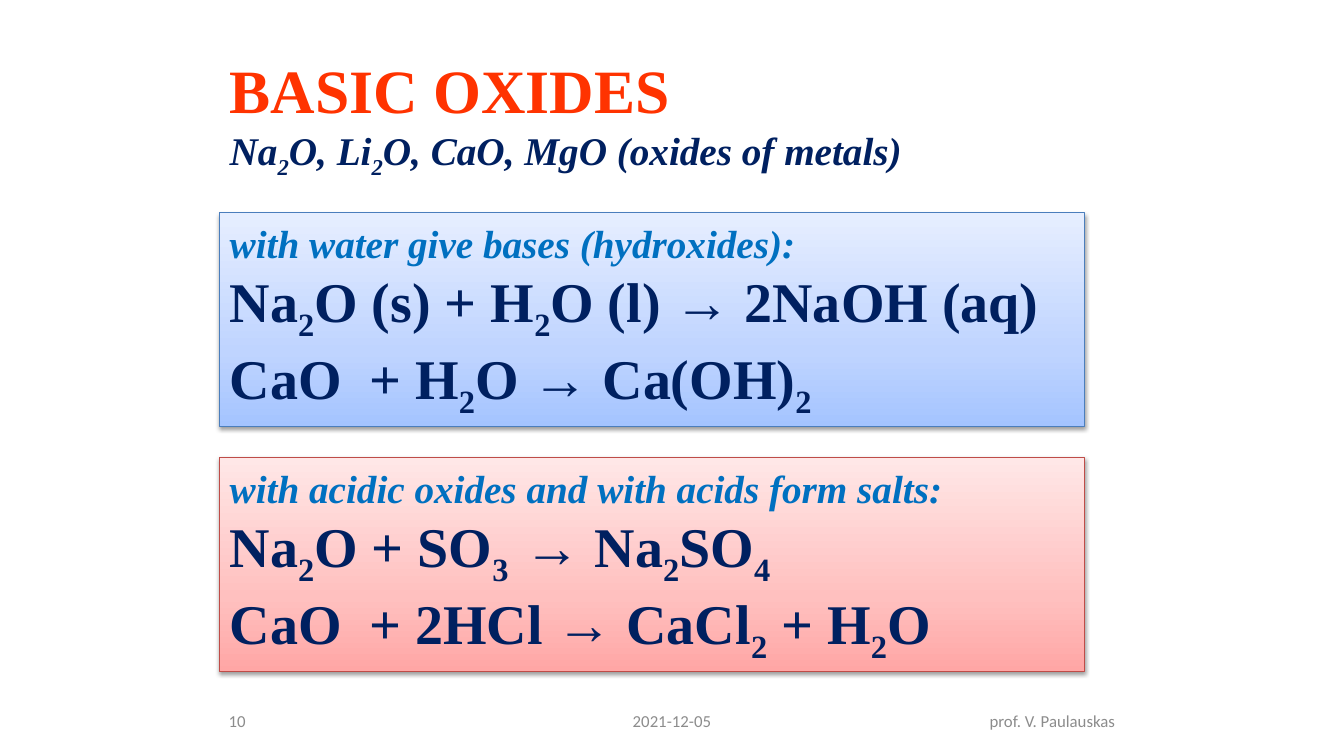
from lxml import etree
from pptx import Presentation
from pptx.dml.color import RGBColor
from pptx.enum.shapes import MSO_SHAPE
from pptx.enum.text import MSO_ANCHOR, PP_ALIGN
from pptx.oxml import parse_xml
from pptx.oxml.ns import nsdecls, qn
from pptx.util import Inches, Pt

RECTANGLE = MSO_SHAPE.RECTANGLE
MIDDLE = MSO_ANCHOR.MIDDLE
LEFT, CENTER, RIGHT = PP_ALIGN.LEFT, PP_ALIGN.CENTER, PP_ALIGN.RIGHT

ORANGE = RGBColor(0xFF, 0x33, 0x00)
NAVY = RGBColor(0x00, 0x20, 0x60)
BLUE = RGBColor(0x00, 0x70, 0xC0)
GRAY = RGBColor(0x8C, 0x8C, 0x8C)
BLUE_EDGE = RGBColor(0x4B, 0x7E, 0xBC)
RED_EDGE = RGBColor(0xBF, 0x4C, 0x48)
BLUE_STOPS = ((0, "A4C4FF"), (35, "BFD4FF"), (100, "E6EEFF"))
RED_STOPS = ((0, "FFA6A5"), (35, "FFC0BF"), (100, "FFE7E7"))


def write_formulas(sp, lines):
    """Write (text, size, color, italic) lines; braces enclose a subscript."""
    tf = sp.text_frame
    tf.word_wrap = True
    tf.vertical_anchor = MIDDLE
    for i, (text, size, color, italic) in enumerate(lines):
        p = tf.add_paragraph() if i else tf.paragraphs[0]
        p.alignment = LEFT
        for j, part in enumerate(text.replace("}", "{").split("{")):
            if not part:
                continue
            r = p.add_run()
            r.text = part
            r.font.name = "Times New Roman"
            r.font.size = Pt(size)
            r.font.bold = True
            r.font.italic = italic
            r.font.color.rgb = color
            if j % 2:
                r._r.get_or_add_rPr().set("baseline", "-25000")


def style_panel(sp, stops, edge):
    """Give a panel its upward gradient, thin edge and soft drop shadow."""
    sp.line.color.rgb = edge
    sp.line.width = Pt(0.75)
    sp.fill.gradient()
    sp.fill.gradient_angle = 90
    gs_list = sp._element.spPr.find(qn("a:gradFill")).find(qn("a:gsLst"))
    for gs in list(gs_list):
        gs_list.remove(gs)
    for position, color in stops:
        gs = etree.SubElement(gs_list, qn("a:gs"), pos=str(position * 1000))
        etree.SubElement(gs, qn("a:srgbClr"), val=color)
    sp.shadow.inherit = False
    effects = sp._element.spPr.find(qn("a:effectLst"))
    effects.append(parse_xml(
        f'<a:outerShdw {nsdecls("a")} blurRad="{Pt(3.1)}" dist="{Pt(1.6)}" '
        'dir="5400000" rotWithShape="0"><a:srgbClr val="000000">'
        '<a:alpha val="38000"/></a:srgbClr></a:outerShdw>'))


prs = Presentation()
prs.slide_width, prs.slide_height = Inches(13.33), Inches(7.5)
s = prs.slides.add_slide(prs.slide_layouts[6])

title = s.shapes.add_textbox(Inches(2.18), Inches(0.21), Inches(8.99), Inches(1.88))
write_formulas(title, [
    ("BASIC OXIDES", 44, ORANGE, False),
    ("Na{2}O, Li{2}O, CaO, MgO (oxides of metals)", 28, NAVY, True),
])

panels = [
    (2.11, BLUE_STOPS, BLUE_EDGE, "with water give bases (hydroxides):",
     ["Na{2}O (s) + H{2}O (l) → 2NaOH (aq)", "CaO  + H{2}O → Ca(OH){2}"]),
    (4.54, RED_STOPS, RED_EDGE, "with acidic oxides and with acids form salts:",
     ["Na{2}O + SO{3  }→ Na{2}SO{4}", "CaO  + 2HCl → CaCl{2} + H{2}O"]),
]
for top, stops, edge, heading, equations in panels:
    sp = s.shapes.add_shape(RECTANGLE, Inches(2.18), Inches(top), Inches(8.58), Inches(2.12))
    style_panel(sp, stops, edge)
    write_formulas(sp, [(heading, 28, BLUE, True)]
                   + [(equation, 40, NAVY, False) for equation in equations])

footers = [
    (2.17, 2.33, "10", LEFT),
    (5.08, 3.17, "2021-12-05", CENTER),
    (8.83, 2.33, "prof. V. Paulauskas", RIGHT),
]
for left, width, text, alignment in footers:
    tf = s.shapes.add_textbox(Inches(left), Inches(6.95), Inches(width), Inches(0.4)).text_frame
    tf.word_wrap = True
    tf.vertical_anchor = MIDDLE
    p = tf.paragraphs[0]
    p.text = text
    p.alignment = alignment
    p.font.name = "Calibri"
    p.font.size = Pt(12)
    p.font.color.rgb = GRAY

prs.save("out.pptx")
